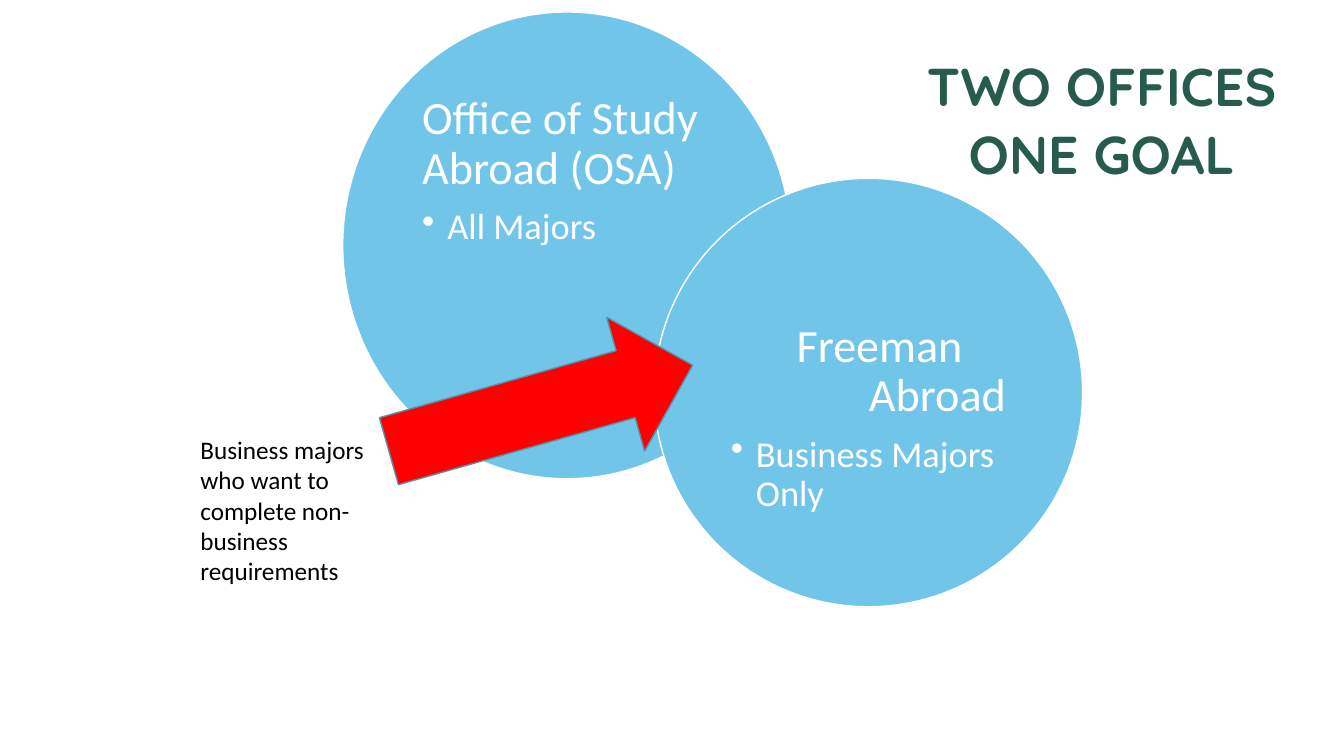
import pptx
import pptx.dml.color
import pptx.enum.shapes
import pptx.enum.text
import pptx.oxml
import pptx.oxml.ns
import pptx.util

Pt = pptx.util.Pt
RGBColor = pptx.dml.color.RGBColor
ALIGN = pptx.enum.text.PP_ALIGN
ANCHOR = pptx.enum.text.MSO_ANCHOR
SHAPE = pptx.enum.shapes.MSO_SHAPE

GREEN = RGBColor(0x26, 0x5B, 0x4D)
SKY = RGBColor(0x71, 0xC5, 0xE8)
STEEL = RGBColor(0x54, 0x92, 0xAC)
RED = RGBColor(0xFF, 0x00, 0x00)
WHITE = RGBColor(0xFF, 0xFF, 0xFF)
BLACK = RGBColor(0x00, 0x00, 0x00)

TEXT_MARGIN = 0.146  # share of a circle left clear on each side of its text
TEXT_INSET = 10


def points(*lengths):
    return [Pt(length) for length in lengths]


def write_paragraph(frame, text, size, color, font="Calibri", bold=False, align=ALIGN.LEFT,
                    spacing=0.9, after=0, indent=0, bullet=False):
    """Fill the frame's first paragraph if it is empty, otherwise add one."""
    first = frame.paragraphs[0]
    paragraph = frame.add_paragraph() if first.runs else first
    properties = paragraph._p.get_or_add_pPr()
    if indent:
        properties.set("marL", str(Pt(indent)))
    if bullet:
        properties.set("indent", str(-Pt(indent)))
        properties.append(pptx.oxml.parse_xml(
            f'<a:buChar {pptx.oxml.ns.nsdecls("a")} char="•"/>'))
    paragraph.alignment = align
    paragraph.line_spacing = spacing
    paragraph.space_before = Pt(0)
    paragraph.space_after = Pt(after)
    run = paragraph.add_run()
    run.text = text
    run.font.name = font
    run.font.size = Pt(size)
    run.font.bold = bold
    run.font.color.rgb = color


def add_filled_shape(slide, kind, box, fill, line):
    shape = slide.shapes.add_shape(kind, *points(*box))
    shape.shadow.inherit = False
    shape.fill.solid()
    shape.fill.fore_color.rgb = fill
    shape.line.color.rgb = line
    shape.line.width = Pt(1)
    return shape


def add_heading(slide, box):
    """Title above, second line in its own box below."""
    left, top, width, height = box
    line_height = 61
    title = slide.shapes.title
    title.left, title.top, title.width, title.height = points(left, top, width, line_height)
    second = slide.shapes.add_textbox(
        *points(left, top + height - line_height, width, line_height))
    for shape, text in ((title, "TWO OFFICES"), (second, "ONE GOAL")):
        frame = shape.text_frame
        frame.word_wrap = True
        frame.auto_size = pptx.enum.text.MSO_AUTO_SIZE.NONE
        frame.vertical_anchor = ANCHOR.BOTTOM
        write_paragraph(frame, text, 38, GREEN, font="Quicksand", bold=True,
                        align=ALIGN.CENTER)


def add_office(slide, box, name_lines, audience, drop=0):
    """Circle with the office name and a bullet for whom it serves."""
    left, top, width, height = box
    add_filled_shape(slide, SHAPE.OVAL, box, SKY, WHITE)
    share = 1 - 2 * TEXT_MARGIN
    text_box = slide.shapes.add_textbox(*points(
        left + TEXT_MARGIN * width, top + TEXT_MARGIN * height + drop,
        share * width, share * height - drop))
    frame = text_box.text_frame
    frame.word_wrap = True
    frame.margin_left = frame.margin_right = Pt(TEXT_INSET)
    frame.margin_top = frame.margin_bottom = Pt(TEXT_INSET)
    for text, line_format in name_lines:
        write_paragraph(frame, text, 33, WHITE, **line_format)
    write_paragraph(frame, audience, 26, WHITE, indent=18, bullet=True)


def add_transfer(slide, arrow_box, note_box):
    """Arrow between the offices and the note that explains it."""
    arrow = add_filled_shape(slide, SHAPE.RIGHT_ARROW, arrow_box, RED, STEEL)
    arrow.rotation = 344.2
    note = slide.shapes.add_textbox(*points(*note_box))
    note.text_frame.word_wrap = True
    write_paragraph(note.text_frame,
                    "Business majors who want to complete non-business requirements",
                    18, BLACK, spacing=1.0)


def build_offices_slide(presentation):
    slide = presentation.slides.add_slide(presentation.slide_layouts[5])
    add_heading(slide, (642.2, 26.6, 289.5, 110))
    add_office(slide, (244.8, 8.6, 320.4, 333.4),
               [("Office of Study Abroad (OSA)", {"after": 10})], "All Majors")
    add_office(slide, (467.3, 127.4, 306, 306),
               [("Freeman", {"indent": 47}),
                ("Abroad", {"align": ALIGN.RIGHT, "after": 10})],
               "Business Majors Only", drop=48)
    add_transfer(slide, (273.6, 241.9, 225.4, 99.4), (136.1, 306.7, 154.1, 116.6))


def main():
    presentation = pptx.Presentation()
    presentation.slide_width, presentation.slide_height = points(960, 540)
    build_offices_slide(presentation)
    presentation.save("out.pptx")


if __name__ == "__main__":
    main()
